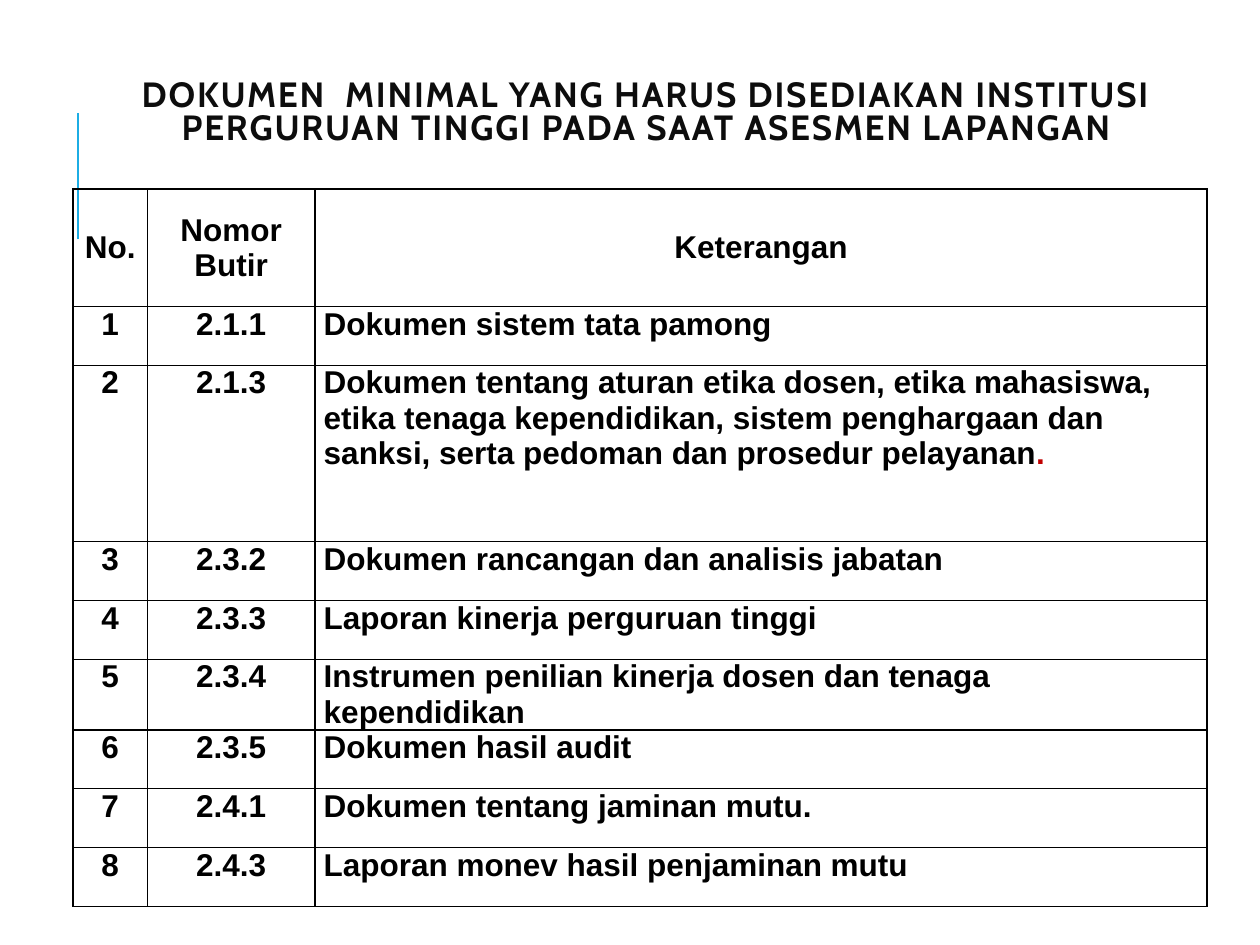
from dataclasses import dataclass

from lxml.etree import SubElement
from pptx import Presentation
from pptx.dml.color import RGBColor
from pptx.enum.shapes import MSO_CONNECTOR
from pptx.enum.text import MSO_ANCHOR, MSO_AUTO_SIZE, PP_ALIGN
from pptx.oxml.ns import qn
from pptx.slide import Slide
from pptx.table import _Cell
from pptx.util import Inches, Pt


@dataclass(frozen=True)
class Theme:
    head: str = "Cabin"
    body: str = "Arial"
    head_size: int = 20
    body_size: int = 18
    ink: str = "000000"
    title: str = "0D0D0D"
    rule: str = "1CADE4"
    mark: str = "C00000"


@dataclass(frozen=True)
class Row:
    no: str
    item: str
    note: str
    units: int = 1
    end: str = ""  # closing mark in the accent colour


THEME = Theme()
UNIT = 1.4 / 3  # height of a one-unit row, in inches
COLS = (0.59, 1.33, 7.08)
TITLE = ("DOKUMEN  MINIMAL YANG HARUS DISEDIAKAN INSTITUSI "
         "PERGURUAN TINGGI PADA SAAT ASESMEN LAPANGAN")
ROWS = (
    Row("No.", "Nomor Butir", "Keterangan", 2),
    Row("1", "2.1.1", "Dokumen sistem tata pamong"),
    Row("2", "2.1.3", "Dokumen tentang aturan etika dosen, etika mahasiswa, "
        "etika tenaga kependidikan, sistem penghargaan dan sanksi, "
        "serta pedoman dan prosedur pelayanan", 3, "."),
    Row("3", "2.3.2", "Dokumen rancangan dan analisis jabatan"),
    Row("4", "2.3.3", "Laporan kinerja perguruan tinggi"),
    Row("5", "2.3.4", "Instrumen penilian kinerja dosen dan tenaga kependidikan"),
    Row("6", "2.3.5", "Dokumen hasil audit"),
    Row("7", "2.4.1", "Dokumen tentang jaminan mutu."),
    Row("8", "2.4.3", "Laporan monev hasil penjaminan mutu"),
)


def style(font, name: str, size: int, color: str) -> None:
    font.name, font.size, font.bold = name, Pt(size), True
    font.color.rgb = RGBColor.from_string(color)


def add_rule(slide: Slide) -> None:
    x = Inches(0.62)
    line = slide.shapes.add_connector(
        MSO_CONNECTOR.STRAIGHT, x, Inches(1.9), x, Inches(0.9))
    line.line.color.rgb = RGBColor.from_string(THEME.rule)
    line.line.width = Pt(1.5)
    SubElement(line._element.spPr, qn("a:effectLst"))


def set_title(slide: Slide) -> None:
    box = slide.shapes.title
    box.left, box.top = Inches(0.67), Inches(0.5)
    box.width, box.height = Inches(8.92), Inches(1.08)
    frame = box.text_frame
    frame.text = TITLE
    frame.word_wrap = True
    frame.auto_size = MSO_AUTO_SIZE.NONE
    frame.vertical_anchor = MSO_ANCHOR.MIDDLE
    frame.margin_bottom = Inches(0.32)
    para = frame.paragraphs[0]
    para.alignment = PP_ALIGN.CENTER
    para.line_spacing = 0.8
    style(para.font, THEME.head, THEME.head_size, THEME.title)
    para.runs[0].font._element.set("spc", "100")


def add_border(cell: _Cell) -> None:
    props = cell._tc.get_or_add_tcPr()
    for i, side in enumerate(("lnL", "lnR", "lnT", "lnB")):
        line = props.makeelement(qn(f"a:{side}"), {"w": str(Pt(1))})
        fill = SubElement(line, qn("a:solidFill"))
        SubElement(fill, qn("a:srgbClr"), val=THEME.ink)
        props.insert(i, line)


def fill_cell(cell: _Cell, text: str, end: str, head: bool, mid: bool) -> None:
    cell.fill.background()
    add_border(cell)
    cell.margin_left = cell.margin_right = Inches(0.07)
    cell.margin_top = cell.margin_bottom = 0
    cell.vertical_anchor = MSO_ANCHOR.MIDDLE if head else MSO_ANCHOR.TOP
    para = cell.text_frame.paragraphs[0]
    para.text = text
    para.alignment = PP_ALIGN.CENTER if mid else PP_ALIGN.LEFT
    style(para.font, THEME.body, THEME.body_size, THEME.ink)
    if end:
        run = para.add_run()
        run.text = end
        run.font.color.rgb = RGBColor.from_string(THEME.mark)


def add_grid(slide: Slide) -> None:
    high = UNIT * sum(row.units for row in ROWS)
    table = slide.shapes.add_table(
        len(ROWS), len(COLS), Inches(0.58), Inches(1.5),
        Inches(sum(COLS)), Inches(high)).table
    table.horz_banding = False
    for col, width in zip(table.columns, COLS):
        col.width = Inches(width)
    for r, row in enumerate(ROWS):
        table.rows[r].height = Inches(UNIT * row.units)
        for c, text in enumerate((row.no, row.item, row.note)):
            last = c == len(COLS) - 1
            fill_cell(table.cell(r, c), text, row.end if last else "",
                      head=r == 0, mid=r == 0 or not last)


def main() -> None:
    deck = Presentation()
    deck.slide_width, deck.slide_height = Inches(10), Inches(7.5)
    slide = deck.slides.add_slide(deck.slide_layouts.get_by_name("Title Only"))
    add_rule(slide)
    set_title(slide)
    add_grid(slide)
    deck.save("out.pptx")


if __name__ == "__main__":
    main()
